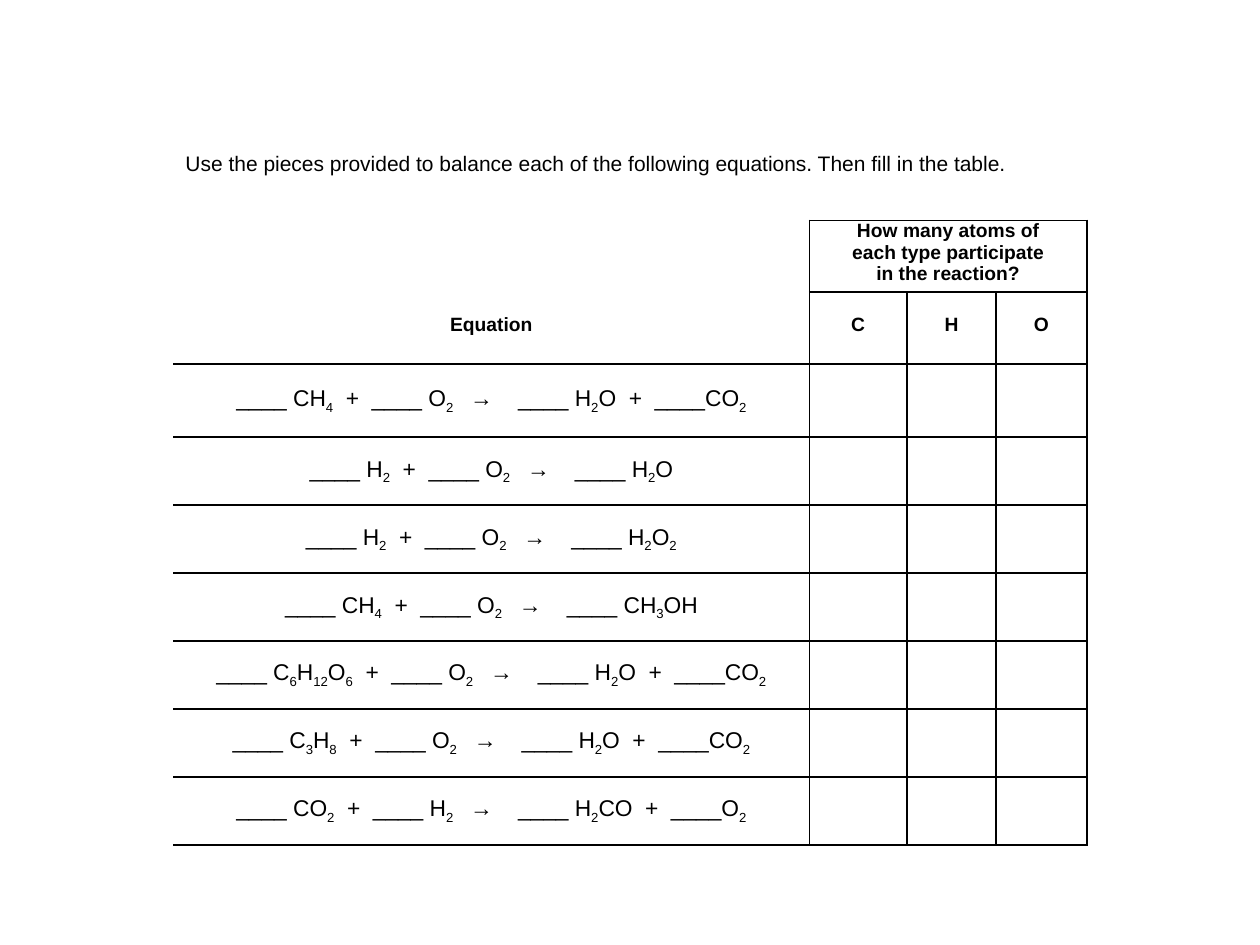
from itertools import groupby

from lxml.etree import SubElement
from pptx import Presentation
from pptx.dml.color import RGBColor
from pptx.enum.text import MSO_ANCHOR, PP_ALIGN
from pptx.oxml.ns import qn
from pptx.util import Cm, Pt

INK = "000000"
FONT = "Arial"
COLUMN_WIDTHS = [12.83, 1.96, 1.8, 1.83]
ROW_HEIGHTS = [1.45, 1.45, 1.47] + [1.37] * 6
QUESTION = ["How many atoms of", "each type participate", "in the reaction?"]
HEADINGS = ["Equation", "C", "H", "O"]
EQUATIONS = [
    "____ CH4 + ____ O2 → ____ H2O + ____CO2",
    "____ H2 + ____ O2 → ____ H2O",
    "____ H2 + ____ O2 → ____ H2O2",
    "____ CH4 + ____ O2 → ____ CH3OH",
    "____ C6H12O6 + ____ O2 → ____ H2O + ____CO2",
    "____ C3H8 + ____ O2 → ____ H2O + ____CO2",
    "____ CO2 + ____ H2 → ____ H2CO + ____O2",
]
# Extra points of width for the space before and after each operator
OPERATOR_GAPS = {"+": (3.6, 3.6), "→": (6, 10.8)}


def color(hex_string):
    return RGBColor.from_string(hex_string)


def write(paragraph, text, size=13, bold=False, subscript=False, spacing=0):
    run = paragraph.add_run()
    run.text = text
    run.font.name = FONT
    run.font.size = Pt(size)
    run.font.bold = bold
    run.font.color.rgb = color(INK)
    properties = run.font._element
    if subscript:
        properties.set("baseline", "-25000")
    if spacing:
        properties.set("spc", str(round(spacing * 100)))


def write_equation(paragraph, equation):
    """Digits become subscripts, and operators get wide spaces around them."""
    for token in equation.split():
        if token in OPERATOR_GAPS:
            before, after = OPERATOR_GAPS[token]
            write(paragraph, " ", spacing=before)
            write(paragraph, token)
            write(paragraph, " ", spacing=after)
        elif token == "____":
            write(paragraph, token + " ")
        else:
            for is_digit, letters in groupby(token, str.isdigit):
                write(paragraph, "".join(letters), subscript=is_digit)


def set_borders(cell, sides):
    """Rule the sides named in a string of L, R, T and B; clear the others."""
    properties = cell._tc.get_or_add_tcPr()
    for index, side in enumerate("LRTB"):
        line = SubElement(properties, qn(f"a:ln{side}"), w=str(Pt(1)))
        properties.insert(index, line)
        if side in sides:
            fill = SubElement(line, qn("a:solidFill"))
            SubElement(fill, qn("a:srgbClr"), val=INK)
        else:
            SubElement(line, qn("a:noFill"))


def format_cell(cell, row, column):
    cell.fill.background()
    cell.margin_left = cell.margin_right = Cm(0.18)
    cell.margin_top = cell.margin_bottom = 0
    cell.vertical_anchor = MSO_ANCHOR.MIDDLE
    cell.text_frame.paragraphs[0].alignment = PP_ALIGN.CENTER
    if column:
        sides = "LRTB"
    else:
        sides = {0: "R", 1: "RB"}.get(row, "RTB")
    set_borders(cell, sides)


def add_instruction(slide, left, top, width, height):
    box = slide.shapes.add_textbox(Cm(left), Cm(top), Cm(width), Cm(height))
    frame = box.text_frame
    frame.word_wrap = True
    frame.vertical_anchor = MSO_ANCHOR.MIDDLE
    write(frame.paragraphs[0],
          "Use the pieces provided to balance each of the following equations. "
          "Then fill in the table.", size=12)


def add_equation_table(slide, left, top):
    table = slide.shapes.add_table(
        len(ROW_HEIGHTS), len(COLUMN_WIDTHS), Cm(left), Cm(top),
        Cm(sum(COLUMN_WIDTHS)), Cm(sum(ROW_HEIGHTS))).table
    table.first_row = table.horz_banding = False
    for column, width in zip(table.columns, COLUMN_WIDTHS):
        column.width = Cm(width)
    for row, height in zip(table.rows, ROW_HEIGHTS):
        row.height = Cm(height)
    for row in range(len(ROW_HEIGHTS)):
        for column in range(len(COLUMN_WIDTHS)):
            format_cell(table.cell(row, column), row, column)

    question_cell = table.cell(0, 1)
    question_cell.merge(table.cell(0, 3))
    question_cell.vertical_anchor = MSO_ANCHOR.TOP
    frame = question_cell.text_frame
    for index, line in enumerate(QUESTION):
        paragraph = frame.add_paragraph() if index else frame.paragraphs[0]
        paragraph.alignment = PP_ALIGN.CENTER
        write(paragraph, line, size=11, bold=True)

    for column, heading in enumerate(HEADINGS):
        cell = table.cell(1, column)
        cell.margin_bottom = Cm(0.13)
        write(cell.text_frame.paragraphs[0], heading, size=11, bold=True)
    for row, equation in enumerate(EQUATIONS, start=2):
        write_equation(table.cell(row, 0).text_frame.paragraphs[0], equation)


def main():
    presentation = Presentation()
    presentation.slide_width = Cm(25.4)
    presentation.slide_height = Cm(19.05)
    slide = presentation.slides.add_slide(presentation.slide_layouts[6])
    add_equation_table(slide, left=3.49, top=4.44)
    add_instruction(slide, left=3.49, top=2.79, width=18.42, height=1)
    presentation.save("out.pptx")


if __name__ == "__main__":
    main()
